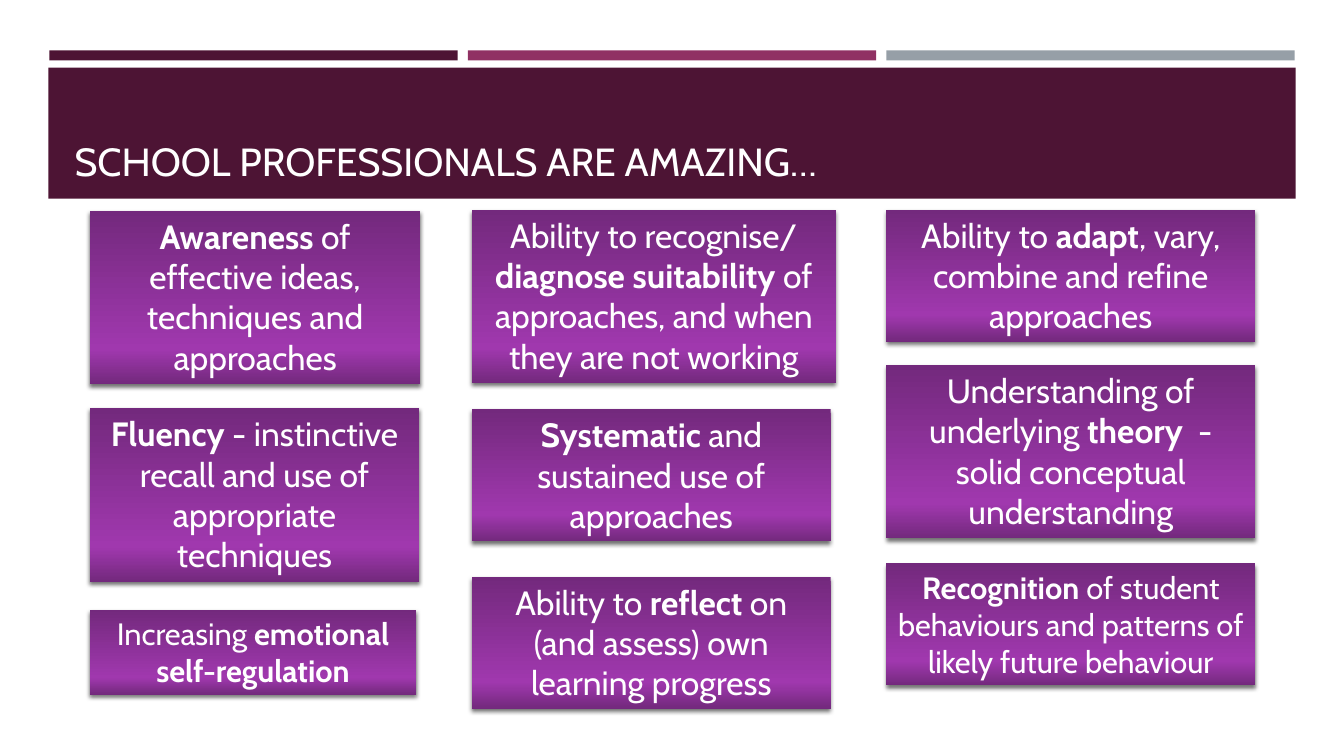
from copy import deepcopy
from dataclasses import dataclass

from lxml.etree import SubElement
from pptx import Presentation
from pptx.dml.color import RGBColor
from pptx.enum.shapes import MSO_SHAPE
from pptx.enum.text import MSO_ANCHOR, MSO_AUTO_SIZE, PP_ALIGN
from pptx.oxml.ns import qn
from pptx.shapes.autoshape import Shape
from pptx.slide import Slide
from pptx.text.text import TextFrame, _Paragraph
from pptx.util import Inches, Pt


@dataclass(frozen=True)
class Theme:
    font: str = "Cabin"
    plum: str = "4D1434"
    berry: str = "903163"
    steel: str = "969FA7"
    white: str = "FFFFFF"
    shadow: str = "000000"
    card_gradient: tuple[tuple[float, str], ...] = (
        (0, "73297D"), (0.8, "A038AE"), (1, "73297D"))
    title_size: int = 28
    card_size: int = 24
    small_card_size: int = 22


@dataclass(frozen=True)
class Bar:
    left: float
    top: float
    width: float
    height: float
    color: str


@dataclass(frozen=True)
class Card:
    """A skill; words between asterisks are bold."""
    top: float
    width: float
    height: float
    text: str
    size: int


@dataclass(frozen=True)
class Column:
    left: float
    cards: tuple[Card, ...]


THEME = Theme()
BAR_LEFT, BAR_PITCH = 0.49, 4.15
BARS = [Bar(BAR_LEFT + i * BAR_PITCH, 0.5, 4.05, 0.1, color)
        for i, color in enumerate((THEME.plum, THEME.berry, THEME.steel))]
TITLE_BAND = Bar(0.48, 0.67, 12.37, 1.3, THEME.plum)
BIG, SMALL = THEME.card_size, THEME.small_card_size

COLUMNS = (
    Column(0.89, (
        Card(2.09, 3.28, 1.72,
             "*Awareness* of effective ideas, techniques and approaches", BIG),
        Card(4.05, 3.27, 1.72,
             "*Fluency* - instinctive recall and use of appropriate techniques", BIG),
        Card(6.05, 3.24, 0.84, "Increasing *emotional self-regulation*", SMALL),
    )),
    Column(4.68, (
        Card(2.08, 3.61, 1.72,
             "Ability to recognise/ *diagnose suitability *of approaches, "
             "and when they are not working", BIG),
        Card(4.06, 3.56, 1.31, "*Systematic* and sustained use of approaches", BIG),
        Card(5.72, 3.56, 1.31,
             "Ability to *reflect* on (and assess) own learning progress", BIG),
    )),
    Column(8.79, (
        Card(2.08, 3.66, 1.31,
             "Ability to *adapt*, vary, combine and refine approaches", BIG),
        Card(3.62, 3.66, 1.72,
             "Understanding of underlying *theory*  - solid conceptual understanding",
             BIG),
        Card(5.59, 3.66, 1.21,
             "*Recognition *of student behaviours and patterns of likely "
             "future behaviour", SMALL),
    )),
)


def add_rectangle(slide: Slide, left: float, top: float,
                  width: float, height: float) -> Shape:
    """Add a rectangle without outline or shadow."""
    rectangle = slide.shapes.add_shape(
        MSO_SHAPE.RECTANGLE, Inches(left), Inches(top), Inches(width), Inches(height))
    rectangle.line.fill.background()
    rectangle.shadow.inherit = False
    return rectangle


def add_bar(slide: Slide, bar: Bar) -> None:
    rectangle = add_rectangle(slide, bar.left, bar.top, bar.width, bar.height)
    rectangle.fill.solid()
    rectangle.fill.fore_color.rgb = RGBColor.from_string(bar.color)


def format_frame(frame: TextFrame, anchor: MSO_ANCHOR, auto_size: MSO_AUTO_SIZE) -> None:
    settings = {
        "word_wrap": True, "vertical_anchor": anchor, "auto_size": auto_size,
        "margin_left": Inches(0.1), "margin_right": Inches(0.1),
        "margin_top": Inches(0.05), "margin_bottom": Inches(0.05),
    }
    for name, value in settings.items():
        setattr(frame, name, value)


def write_runs(paragraph: _Paragraph, text: str, size: int) -> None:
    """Write text, with the parts between asterisks in bold."""
    for index, part in enumerate(text.split("*")):
        if not part:
            continue
        run = paragraph.add_run()
        run.text = part
        settings = {"name": THEME.font, "size": Pt(size), "bold": index % 2 == 1}
        for name, value in settings.items():
            setattr(run.font, name, value)
        run.font.color.rgb = RGBColor.from_string(THEME.white)


def fill_with_gradient(shape: Shape) -> None:
    shape.fill.gradient()
    shape.fill.gradient_angle = 270
    stop_list = shape._element.spPr.find(f".//{qn('a:gsLst')}")
    stop_list.append(deepcopy(stop_list[0]))
    for stop, (position, color) in zip(shape.fill.gradient_stops, THEME.card_gradient):
        stop.position = position
        stop.color.rgb = RGBColor.from_string(color)


def cast_shadow(shape: Shape) -> None:
    effects = shape._element.spPr.find(qn("a:effectLst"))
    shadow = SubElement(effects, qn("a:outerShdw"), {
        "blurRad": str(Pt(3)), "dist": str(Pt(2)), "dir": "5400000", "rotWithShape": "0"})
    color = SubElement(shadow, qn("a:srgbClr"), val=THEME.shadow)
    SubElement(color, qn("a:alpha"), val="55000")


def add_card(slide: Slide, left: float, card: Card) -> None:
    rectangle = add_rectangle(slide, left, card.top, card.width, card.height)
    fill_with_gradient(rectangle)
    cast_shadow(rectangle)
    format_frame(rectangle.text_frame, MSO_ANCHOR.TOP, MSO_AUTO_SIZE.SHAPE_TO_FIT_TEXT)
    paragraph = rectangle.text_frame.paragraphs[0]
    paragraph.alignment = PP_ALIGN.CENTER
    write_runs(paragraph, card.text, card.size)


def place_title(slide: Slide, text: str) -> None:
    """Format the title placeholder and bring it in front of its band."""
    title = slide.shapes.title
    settings = {"left": Inches(0.64), "top": Inches(0.77),
                "width": Inches(12.06), "height": Inches(1.11)}
    for name, value in settings.items():
        setattr(title, name, value)
    format_frame(title.text_frame, MSO_ANCHOR.BOTTOM, MSO_AUTO_SIZE.NONE)
    paragraph = title.text_frame.paragraphs[0]
    paragraph.alignment = PP_ALIGN.LEFT
    write_runs(paragraph, text, THEME.title_size)
    slide.shapes._spTree.append(title._element)


def main() -> None:
    presentation = Presentation()
    presentation.slide_width = Inches(13.33)
    presentation.slide_height = Inches(7.5)
    slide = presentation.slides.add_slide(presentation.slide_layouts[5])
    for bar in (*BARS, TITLE_BAND):
        add_bar(slide, bar)
    place_title(slide, "SCHOOL PROFESSIONALS ARE AMAZING…")
    for column in COLUMNS:
        for card in column.cards:
            add_card(slide, column.left, card)
    presentation.save("out.pptx")


if __name__ == "__main__":
    main()
